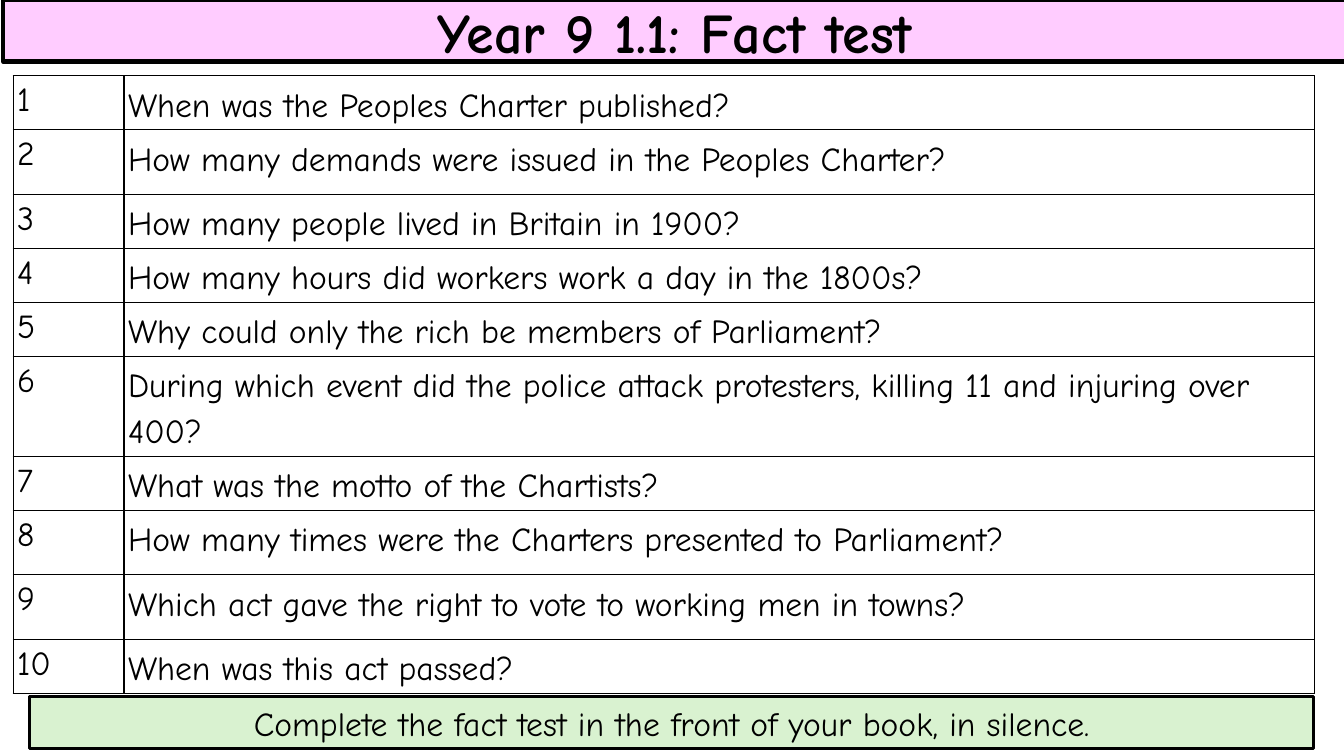
import pptx
import pptx.dml.color
import pptx.enum.shapes
import pptx.enum.text
import pptx.oxml
import pptx.oxml.ns
import pptx.util

RGBColor = pptx.dml.color.RGBColor
BLACK = RGBColor(0x00, 0x00, 0x00)
WHITE = RGBColor(0xFF, 0xFF, 0xFF)
PINK = RGBColor(0xFF, 0xCC, 0xFF)
GREEN = RGBColor(0xD9, 0xF2, 0xD0)

EMU_PER_PX = 9144
QUESTION_HEIGHT, SPACED_HEIGHT, TWO_LINE_HEIGHT = 53, 64, 99

QUESTIONS = [
    ("When was the Peoples Charter published?", QUESTION_HEIGHT),
    ("How many demands were issued in the Peoples Charter?", SPACED_HEIGHT),
    ("How many people lived in Britain in 1900?", QUESTION_HEIGHT),
    ("How many hours did workers work a day in the 1800s?", QUESTION_HEIGHT),
    ("Why could only the rich be members of Parliament?", QUESTION_HEIGHT),
    ("During which event did the police attack protesters, killing 11 and injuring over 400?", TWO_LINE_HEIGHT),
    ("What was the motto of the Chartists?", QUESTION_HEIGHT),
    ("How many times were the Charters presented to Parliament?", SPACED_HEIGHT),
    ("Which act gave the right to vote to working men in towns?", SPACED_HEIGHT),
    ("When was this act passed?", QUESTION_HEIGHT),
]


def px(length):
    return pptx.util.Emu(length * EMU_PER_PX)


class FactTestSlide:
    font_name = "Comic Neue"
    text_color = BLACK
    border_width = 1

    def __init__(self, slide):
        self.slide = slide

    def style_text(self, paragraph, size, bold=False):
        font = paragraph.font
        font.name = self.font_name
        font.size = pptx.util.Pt(size)
        font.bold = bold
        font.color.rgb = self.text_color

    def banner(self, text, left, top, width, height, fill, line_width, size, bold=False):
        banner = self.slide.shapes.add_shape(
            pptx.enum.shapes.MSO_SHAPE.RECTANGLE, px(left), px(top), px(width), px(height))
        banner.shadow.inherit = False
        banner.fill.solid()
        banner.fill.fore_color.rgb = fill
        banner.line.color.rgb = BLACK
        banner.line.width = pptx.util.Pt(line_width)
        frame = banner.text_frame
        frame.word_wrap = True
        frame.vertical_anchor = pptx.enum.text.MSO_ANCHOR.MIDDLE
        frame.text = text
        paragraph = frame.paragraphs[0]
        paragraph.alignment = pptx.enum.text.PP_ALIGN.CENTER
        self.style_text(paragraph, size, bold)

    def border(self, cell):
        properties = cell._tc.get_or_add_tcPr()
        for position, side in enumerate(("lnL", "lnR", "lnT", "lnB")):
            properties.insert(position, pptx.oxml.parse_xml(
                f'<a:{side} {pptx.oxml.ns.nsdecls("a")} w="{pptx.util.Pt(self.border_width)}">'
                f'<a:solidFill><a:srgbClr val="{BLACK}"/></a:solidFill></a:{side}>'))

    def cell(self, cell, text, vertical_margin, line_spacing, space_after):
        cell.text = text
        cell.margin_left = cell.margin_right = px(4)
        cell.margin_top = cell.margin_bottom = px(vertical_margin)
        cell.fill.solid()
        cell.fill.fore_color.rgb = WHITE
        self.border(cell)
        paragraph = cell.text_frame.paragraphs[0]
        paragraph.line_spacing = line_spacing
        paragraph.space_after = pptx.util.Pt(space_after)
        self.style_text(paragraph, 24)

    def question_table(self, questions, left, top, column_widths):
        total_height = sum(height for _, height in questions)
        table = self.slide.shapes.add_table(
            len(questions), len(column_widths), px(left), px(top),
            px(sum(column_widths)), px(total_height)).table
        table.first_row = table.horz_banding = False
        for column, width in zip(table.columns, column_widths):
            column.width = px(width)
        for index, (question, height) in enumerate(questions):
            table.rows[index].height = px(height)
            self.cell(table.cell(index, 0), str(index + 1), 0, 1.15, 10)
            self.cell(table.cell(index, 1), question, 4, 1.19, 6)


def main():
    presentation = pptx.Presentation()
    presentation.slide_width = px(1333)
    presentation.slide_height = px(750)
    fact_test = FactTestSlide(presentation.slides.add_slide(presentation.slide_layouts[6]))
    fact_test.question_table(QUESTIONS, 13, 75, (110, 1181))
    fact_test.banner("Year 9 1.1: Fact test", 3, 0, 1333, 61, PINK, 3, 40, bold=True)
    fact_test.banner("Complete the fact test in the front of your book, in silence.",
                     29, 691, 1274, 52, GREEN, 2.25, 24)
    presentation.save("out.pptx")


if __name__ == "__main__":
    main()
